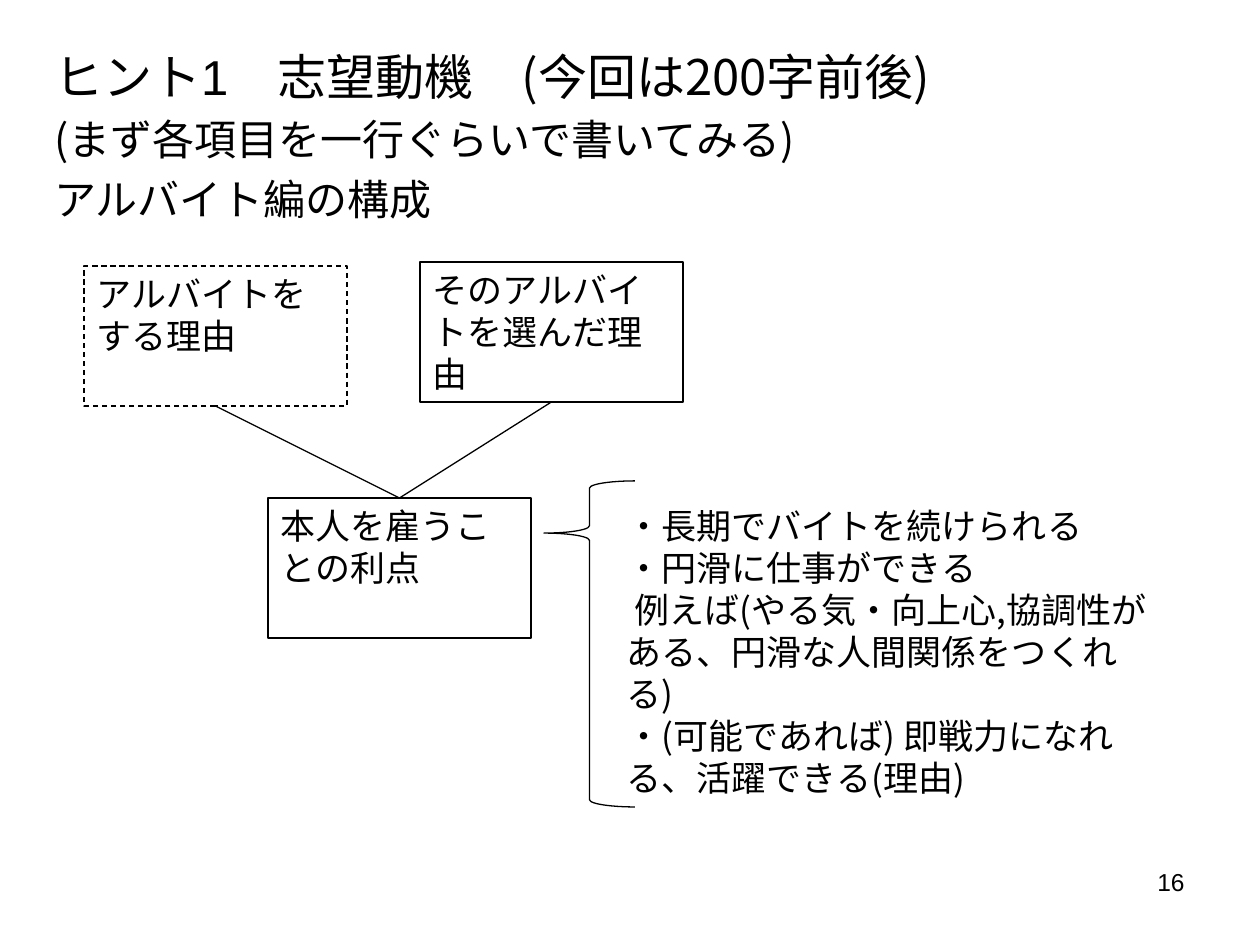
from lxml.etree import SubElement
from pptx import Presentation
from pptx.dml.color import RGBColor
from pptx.enum.dml import MSO_LINE
from pptx.enum.shapes import MSO_CONNECTOR, MSO_SHAPE
from pptx.enum.text import MSO_ANCHOR, PP_ALIGN
from pptx.oxml.ns import qn
from pptx.util import Emu, Pt

BLACK = RGBColor(0, 0, 0)
LATIN = "Arial"
JAPANESE = "Noto Sans CJK JP"
EMU_PER_PX = 914400 / 126
TOP, BOTTOM = 0, 2


def px(*lengths):
    return [Emu(round(length * EMU_PER_PX)) for length in lengths]


class SlideBuilder:
    def __init__(self, slide):
        self.slide = slide

    def style_line(self, line, dash=None):
        line.color.rgb = BLACK
        line.width = Pt(0.75)
        if dash:
            line.dash_style = dash

    def fill_text(self, shape, paragraphs, size, align=PP_ALIGN.LEFT,
                  anchor=MSO_ANCHOR.TOP, spacing=None):
        frame = shape.text_frame
        frame.word_wrap = True
        frame.vertical_anchor = anchor
        for index, runs in enumerate(paragraphs):
            paragraph = frame.add_paragraph() if index else frame.paragraphs[0]
            paragraph.alignment = align
            if spacing:
                paragraph.line_spacing = spacing
            for text, font_name in runs:
                if text == "\n":
                    paragraph.add_line_break()
                    continue
                run = paragraph.add_run()
                run.text = text
                run.font.size = Pt(size)
                run.font.color.rgb = BLACK
                run.font.name = font_name
                east_asian = SubElement(run.font._element, qn("a:ea"))
                east_asian.set("typeface", JAPANESE)

    def text(self, bounds, paragraphs, size, **options):
        shape = self.slide.shapes.add_textbox(*px(*bounds))
        self.fill_text(shape, paragraphs, size, **options)

    def outline(self, kind, bounds, dash=None):
        shape = self.slide.shapes.add_shape(kind, *px(*bounds))
        shape.shadow.inherit = False
        shape.fill.background()
        self.style_line(shape.line, dash)
        return shape

    def box(self, left, top, text, dash=None):
        shape = self.outline(MSO_SHAPE.RECTANGLE, (left, top, 263, 140), dash)
        self.fill_text(shape, [[(text, JAPANESE)]], 20)
        return shape

    def brace(self, bounds, curve, point):
        shape = self.outline(MSO_SHAPE.LEFT_BRACE, bounds)
        shape.adjustments[0] = curve
        shape.adjustments[1] = point

    def connect(self, upper, lower):
        connector = self.slide.shapes.add_connector(
            MSO_CONNECTOR.STRAIGHT, 0, 0, 0, 0)
        connector.begin_connect(upper, BOTTOM)
        connector.end_connect(lower, TOP)
        self.style_line(connector.line)
        SubElement(connector._element.spPr, qn("a:effectLst"))


def main():
    presentation = Presentation()
    presentation.slide_width, presentation.slide_height = px(1260, 945)
    slide = presentation.slides.add_slide(presentation.slide_layouts[6])
    builder = SlideBuilder(slide)

    builder.text((903, 861, 294, 66), [[("16", LATIN)]], 14,
                 align=PP_ALIGN.RIGHT)
    builder.text((42, 28, 1071, 84),
                 [[("ヒント1　", LATIN),
                   ("志望動機　(今回は200字前後)", JAPANESE)]],
                 28, anchor=MSO_ANCHOR.BOTTOM)
    builder.text((42, 97, 1208, 135),
                 [[("(まず各項目を一行ぐらいで書いてみる)", JAPANESE)],
                  [("アルバイト編の構成", JAPANESE)]],
                 24, spacing=1.2)

    reason_to_work = builder.box(84, 266, "アルバイトをする理由", MSO_LINE.DASH)
    reason_to_choose = builder.box(420, 262, "そのアルバイトを選んだ理由")
    benefit = builder.box(268, 498, "本人を雇うことの利点")
    for reason in (reason_to_work, reason_to_choose):
        builder.connect(reason, benefit)

    builder.brace((544, 481, 91, 326), 0.08, 0.16)
    builder.text((614, 498, 546, 310),
                 [[("・長期でバイトを続けられる", JAPANESE)],
                  [("・円滑に仕事ができる", JAPANESE),
                   ("\n", JAPANESE),
                   (" 例えば(やる気・向上心,協調性がある、円滑な人間関係をつくれる)", JAPANESE)],
                  [("・(可能であれば) 即戦力になれる、活躍できる(理由)", JAPANESE)]],
                 20)

    presentation.save("out.pptx")


if __name__ == "__main__":
    main()
